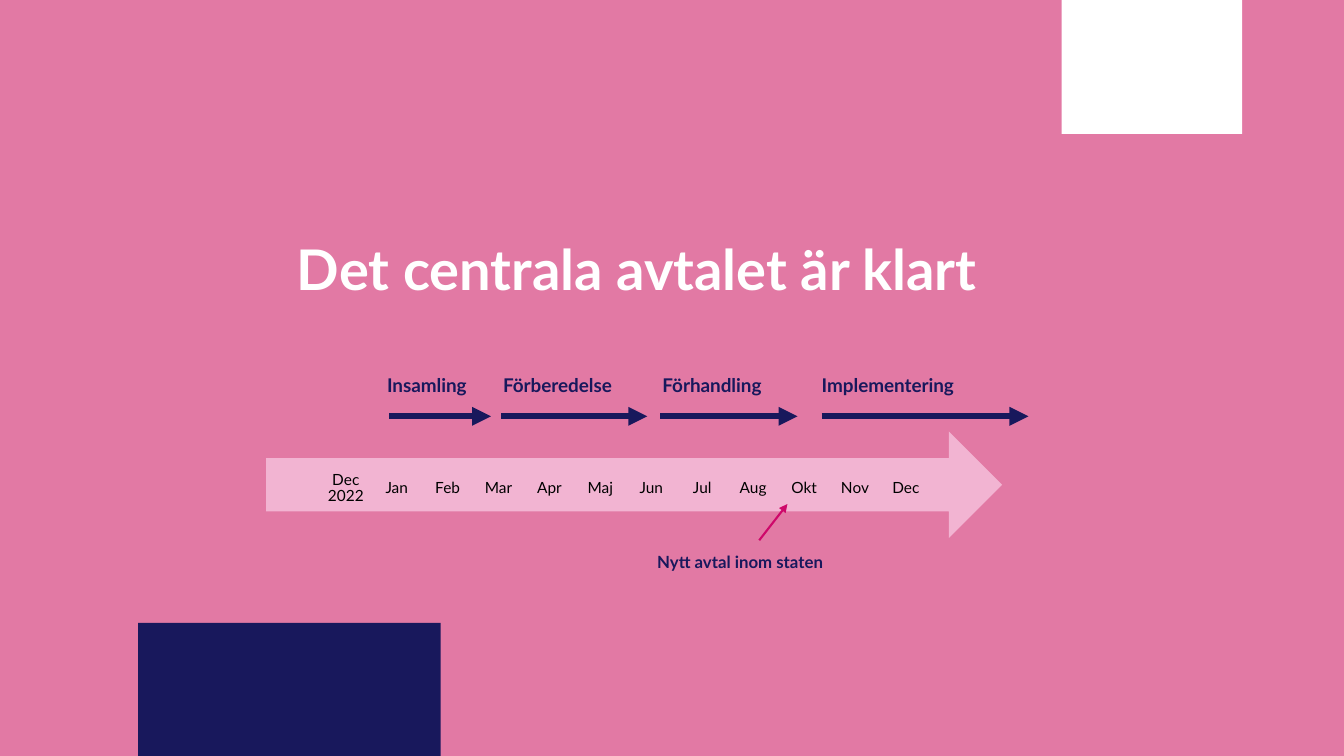
import pptx
import pptx.util
import pptx.dml.color
import pptx.enum.shapes
import pptx.enum.text
import pptx.oxml.ns
from lxml import etree

RGBColor = pptx.dml.color.RGBColor
Inches = pptx.util.Inches
SHAPE = pptx.enum.shapes.MSO_SHAPE
ALIGN = pptx.enum.text.PP_ALIGN
ANCHOR = pptx.enum.text.MSO_ANCHOR

PINK = RGBColor(0xE2, 0x79, 0xA4)
LIGHT_PINK = RGBColor(0xF2, 0xB4, 0xD2)
NAVY = RGBColor(0x18, 0x18, 0x5C)
MAGENTA = RGBColor(0xCE, 0x08, 0x6A)
WHITE = RGBColor(0xFF, 0xFF, 0xFF)
BLACK = RGBColor(0, 0, 0)
FONT = "Lato"

# Slide size and timeline grid, in inches
WIDTH, HEIGHT = 13.33, 7.5
MONTH_LEFT, MONTH_STEP = 3.22, 0.505
MONTH_TOP, MONTH_WIDTH, MONTH_HEIGHT = 4.58, 0.42, 0.53
LABEL_TOP, LABEL_HEIGHT, ARROW_ROW = 3.66, 0.33, 4.13

MONTHS = ["Dec 2022", "Jan", "Feb", "Mar", "Apr", "Maj",
          "Jun", "Jul", "Aug", "Okt", "Nov", "Dec"]
# Name, label left, label width, label inset, arrow start, arrow end
PHASES = [
    ("Insamling", 3.74, 1.09, 0.1, 3.86, 4.87),
    ("Förberedelse", 4.8, 1.53, 0.19, 4.97, 6.42),
    ("Förhandling", 6.38, 1.42, 0.19, 6.55, 7.91),
    ("Implementering", 7.91, 1.88, 0.24, 8.15, 10.2),
]


def add_block(shapes, kind, left, top, width, height, color):
    sp = shapes.add_shape(kind, Inches(left), Inches(top), Inches(width), Inches(height))
    sp.shadow.inherit = False
    sp.fill.solid()
    sp.fill.fore_color.rgb = color
    sp.line.fill.background()
    return sp


def write(sp, text, size, color, bold=False, align=ALIGN.LEFT,
          anchor=ANCHOR.TOP, insets=(0.1, 0.05, 0.1, 0.05), spacing=1.0):
    tf = sp.text_frame
    tf.word_wrap = True
    tf.vertical_anchor = anchor
    tf.margin_left, tf.margin_top, tf.margin_right, tf.margin_bottom = map(Inches, insets)
    p = tf.paragraphs[0]
    p.alignment = align
    p.line_spacing = spacing
    r = p.add_run()
    r.text = text
    r.font.name = FONT
    r.font.size = pptx.util.Pt(size)
    r.font.bold = bold
    r.font.color.rgb = color


def add_text(shapes, left, top, width, height, *args, **style):
    sp = shapes.add_textbox(Inches(left), Inches(top), Inches(width), Inches(height))
    write(sp, *args, **style)


def add_arrow(shapes, start, end, color, weight):
    line = shapes.add_connector(pptx.enum.shapes.MSO_CONNECTOR.STRAIGHT,
                                *map(Inches, start + end))
    line.line.color.rgb = color
    line.line.width = pptx.util.Pt(weight)
    qn = pptx.oxml.ns.qn
    etree.SubElement(line.line._get_or_add_ln(), qn("a:tailEnd"), type="triangle")
    etree.SubElement(line._element.spPr, qn("a:effectLst"))


def add_title(s, text):
    title = s.shapes.title
    title.left, title.top = Inches(0.46), Inches(2.18)
    title.width, title.height = Inches(11.55), Inches(0.86)
    write(title, text, 40, WHITE, bold=True, align=ALIGN.CENTER,
          anchor=ANCHOR.MIDDLE, insets=(0.26, 0.18, 0.1, 0), spacing=0.9)


def add_timeline(s):
    shapes = s.shapes.add_group_shape().shapes
    add_block(shapes, SHAPE.RIGHT_ARROW, 2.64, 4.28, 7.3, 1.06, LIGHT_PINK)
    for i, month in enumerate(MONTHS):
        add_text(shapes, MONTH_LEFT + i * MONTH_STEP, MONTH_TOP, MONTH_WIDTH,
                 MONTH_HEIGHT, month, 11, BLACK, align=ALIGN.CENTER,
                 anchor=ANCHOR.MIDDLE, insets=(0, 0.12, 0, 0.12), spacing=0.9)


def add_phase(s, name, left, width, inset, start, end):
    shapes = s.shapes.add_group_shape().shapes
    add_text(shapes, left, LABEL_TOP, width, LABEL_HEIGHT, name, 13.5, NAVY,
             bold=True, insets=(inset, 0.05, 0, 0.05))
    add_arrow(shapes, (start, ARROW_ROW), (end, ARROW_ROW), NAVY, 4.5)


def main():
    prs = pptx.Presentation()
    prs.slide_width, prs.slide_height = Inches(WIDTH), Inches(HEIGHT)
    s = prs.slides.add_slide(prs.slide_layouts[5])
    s.background.fill.solid()
    s.background.fill.fore_color.rgb = PINK

    # Corner blocks
    add_block(s.shapes, SHAPE.RECTANGLE, 1.37, HEIGHT - 1.32, 3, 1.32, NAVY)
    add_block(s.shapes, SHAPE.RECTANGLE, 10.53, 0, 1.79, 1.33, WHITE)

    # Title, timeline and phases
    add_title(s, "Det centrala avtalet är klart")
    add_timeline(s)
    for phase in PHASES:
        add_phase(s, *phase)

    # Note on the new agreement
    add_arrow(s.shapes, (7.53, 5.36), (7.81, 5), MAGENTA, 1.5)
    add_text(s.shapes, 6.42, 5.42, 2.6, 0.3, "Nytt avtal inom staten", 12, NAVY, bold=True)

    prs.save("out.pptx")


if __name__ == "__main__":
    main()
